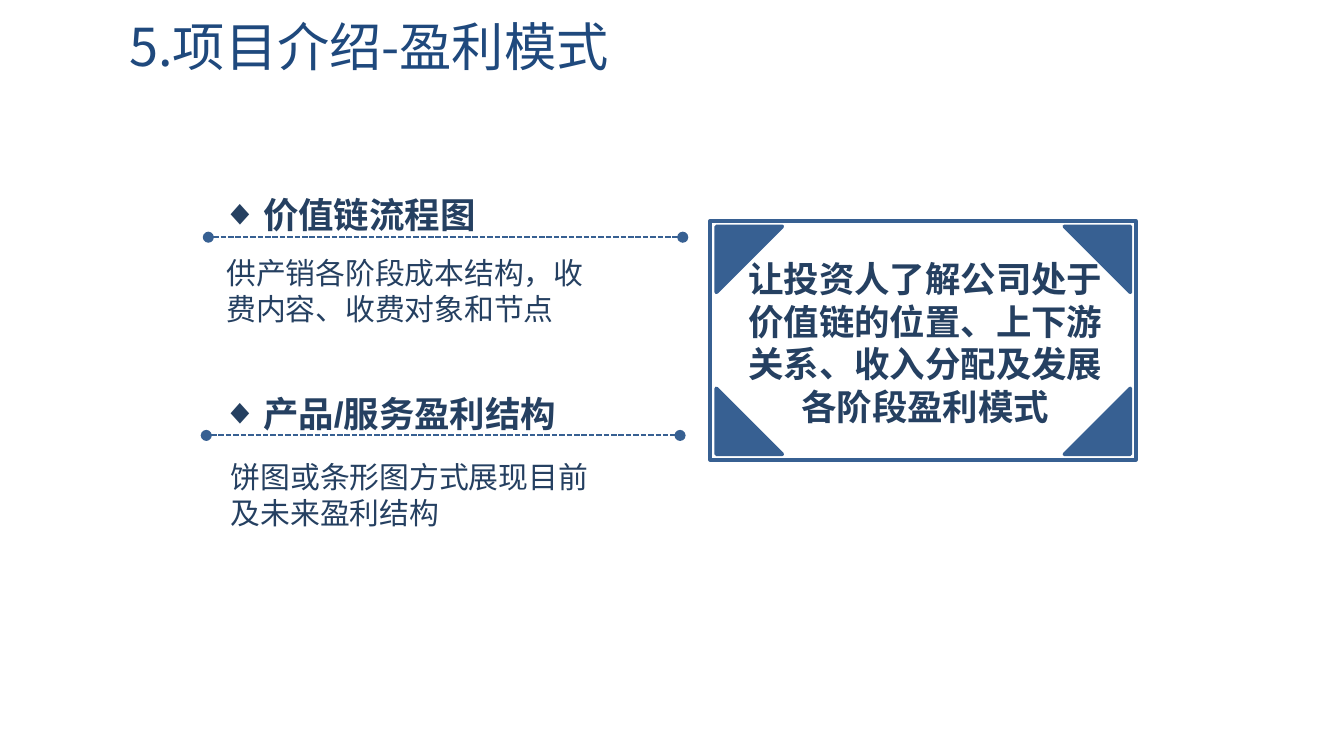
import pptx
import pptx.util
import pptx.dml.color
import pptx.enum.dml
import pptx.enum.shapes
import pptx.enum.text
import pptx.oxml.ns
from lxml import etree

EMU_PER_PX = 4572  # 200 px to the inch
COLORS = {"title": "1F497D", "accent": "376092", "text": "254061"}
SANS = "Noto Sans CJK SC"
ALIGN = pptx.enum.text.PP_ALIGN
SHAPES = pptx.enum.shapes.MSO_SHAPE


def px(*lengths):
    return [pptx.util.Emu(length * EMU_PER_PX) for length in lengths]


def rgb(name):
    return pptx.dml.color.RGBColor.from_string(COLORS[name])


def add_xml(parent, tag, **attributes):
    return etree.SubElement(parent, pptx.oxml.ns.qn(tag), attributes)


class Deck:
    def __init__(self, width, height):
        self.file = pptx.Presentation()
        self.file.slide_width, self.file.slide_height = px(width, height)
        self.slide = self.file.slides.add_slide(self.file.slide_layouts[6])

    def text(self, box, wording, size, color="text", latin=SANS, asian=SANS,
             bold=False, align=ALIGN.LEFT, bullet=None, spacing=None,
             wrap=True, anchor=pptx.enum.text.MSO_ANCHOR.TOP):
        frame = self.slide.shapes.add_textbox(*px(*box)).text_frame
        frame.word_wrap = wrap
        frame.vertical_anchor = anchor
        paragraph = frame.paragraphs[0]
        paragraph.alignment = align
        if spacing:
            paragraph.line_spacing = spacing
        if bullet:
            properties = paragraph._p.get_or_add_pPr()
            margin, indent = px(100, -60)
            properties.set("marL", str(margin))
            properties.set("indent", str(indent))
            add_xml(properties, "a:buFont", typeface="Arial")
            add_xml(properties, "a:buChar", char=bullet)
        run = paragraph.add_run()
        run.text = wording
        run.font.size = pptx.util.Pt(size)
        run.font.bold = bold
        run.font.color.rgb = rgb(color)
        run.font.name = latin
        add_xml(run._r.get_or_add_rPr(), "a:ea", typeface=asian)

    def shape(self, preset, box, line_width, filled=False, flips=()):
        shape = self.slide.shapes.add_shape(preset, *px(*box))
        shape.shadow.inherit = False
        if filled:
            shape.fill.solid()
            shape.fill.fore_color.rgb = rgb("accent")
        else:
            shape.fill.background()
        shape.line.color.rgb = rgb("accent")
        shape.line.width = pptx.util.Pt(line_width)
        add_xml(shape.line._get_or_add_ln(), "a:round")
        for flip in flips:
            shape._element.spPr.xfrm.set(flip, "1")

    def dotted_rule(self, left, right, y):
        rule = self.slide.shapes.add_connector(
            pptx.enum.shapes.MSO_CONNECTOR.STRAIGHT, *px(left, y, right, y))
        rule.line.color.rgb = rgb("accent")
        rule.line.width = pptx.util.Pt(1)
        rule.line.dash_style = pptx.enum.dml.MSO_LINE.SQUARE_DOT
        line = rule.line._get_or_add_ln()
        add_xml(line, "a:headEnd", type="oval")
        add_xml(line, "a:tailEnd", type="oval")
        add_xml(rule._element.spPr, "a:effectLst")


def main():
    deck = Deck(2000, 1125)

    # Title
    deck.text((173, 5, 810, 126), "5.项目介绍-盈利模式", 28, color="title",
              latin="Noto Sans CJK JP", asian="Noto Sans CJK JP",
              wrap=False, anchor=pptx.enum.text.MSO_ANCHOR.MIDDLE)

    # Framed message with a triangle in each corner
    deck.shape(SHAPES.FLOWCHART_PROCESS, (1057, 329, 633, 355), 2.25)
    for left, horizontal in ((1066, ()), (1584, ("flipH",))):
        for top, vertical in ((337, ("flipV",)), (578, ())):
            deck.shape(SHAPES.RIGHT_TRIANGLE, (left, top, 98, 98), 2,
                       filled=True, flips=horizontal + vertical)
    deck.text((1072, 373, 610, 276),
              "让投资人了解公司处于价值链的位置、上下游关系、收入分配及发展各阶段盈利模式",
              19, bold=True, align=ALIGN.CENTER)

    # Topics: heading, dotted rule, explanation
    topics = [
        ("价值链流程图", 258, (310, 1016, 353),
         "供产销各阶段成本结构，收费内容、收费对象和节点", (317, 369)),
        ("产品/服务盈利结构", 555, (307, 1012, 648),
         "饼图或条形图方式展现目前及未来盈利结构", (324, 673)),
    ]
    for heading, heading_top, rule, explanation, corner in topics:
        deck.text((272, heading_top, 712, 96), heading, 19, latin="Arial",
                  bold=True, align=ALIGN.JUSTIFY, bullet="◆", spacing=1.3)
        deck.dotted_rule(*rule)
        deck.text((*corner, 590, 128), explanation, 16)

    deck.file.save("out.pptx")


if __name__ == "__main__":
    main()
